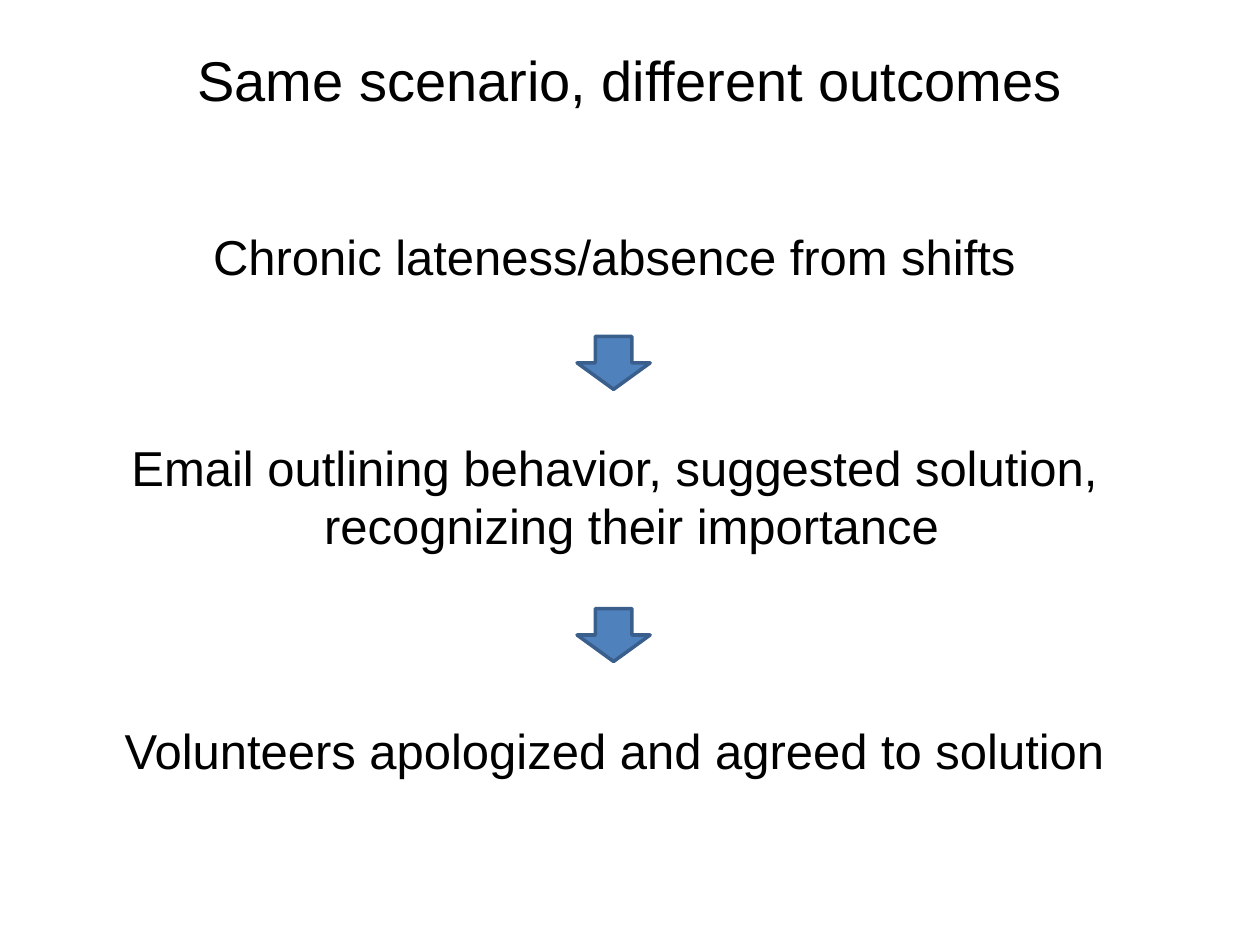
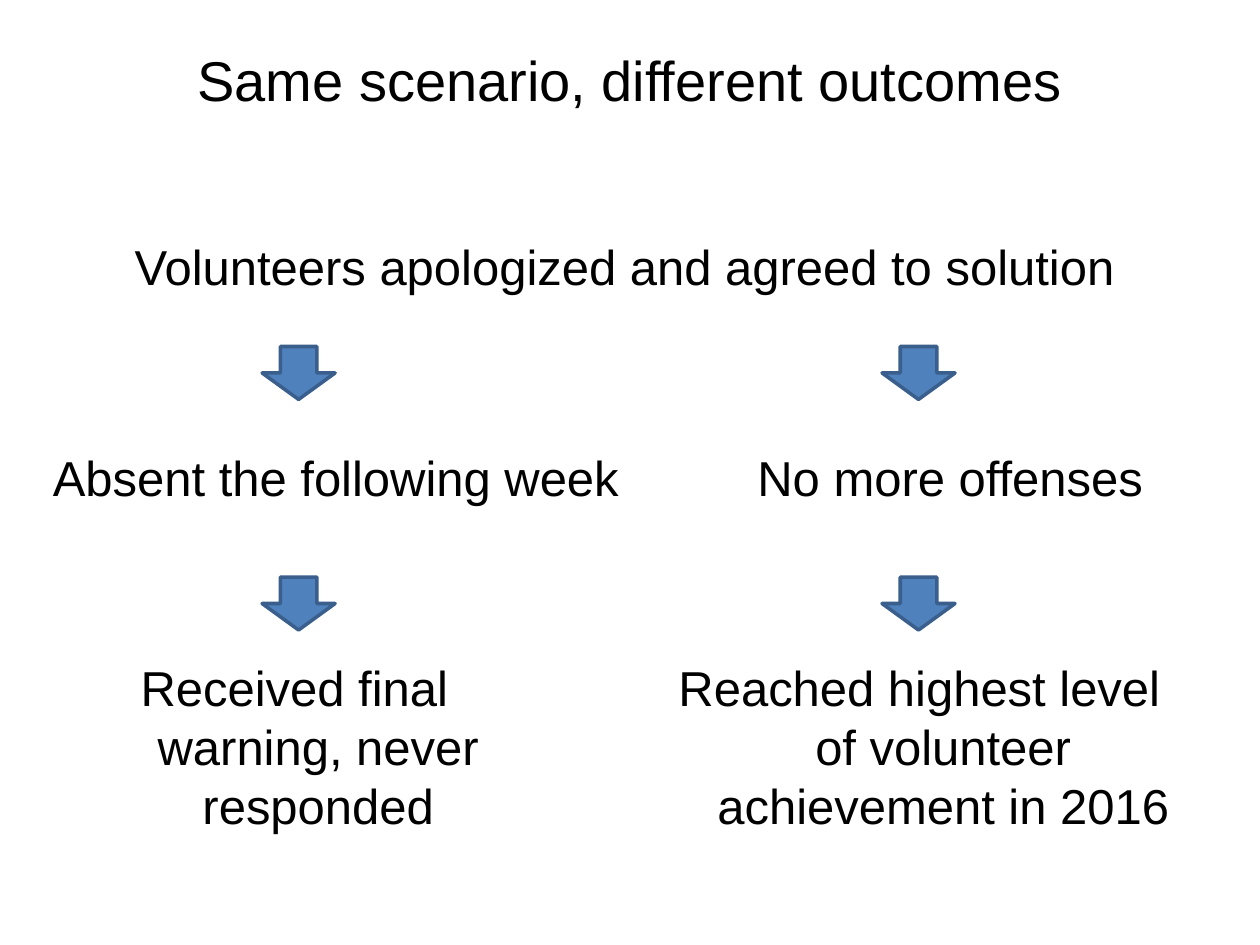
from pptx import Presentation
from pptx.dml.color import RGBColor
from pptx.enum.shapes import MSO_SHAPE
from pptx.enum.text import MSO_ANCHOR, PP_ALIGN
from pptx.oxml.ns import qn
from pptx.util import Inches, Pt
from lxml import etree

BLACK = RGBColor(0x00, 0x00, 0x00)
ARROW_FILL = RGBColor(0x4F, 0x81, 0xBD)
ARROW_EDGE = RGBColor(0x3A, 0x5F, 0x8C)
DOWN_ARROW = MSO_SHAPE.DOWN_ARROW
CENTER = PP_ALIGN.CENTER
MIDDLE, TOP = MSO_ANCHOR.MIDDLE, MSO_ANCHOR.TOP

FONT = "Arial"
TITLE = "Same scenario, different outcomes"
TITLE_BOX = (0.5, 0, 9, 1.25)
AGREEMENT = "Volunteers apologized and agreed to solution"
HANGING_INDENT = Inches(0.38)
ARROW_WIDTH, ARROW_HEIGHT = 0.58, 0.42

# Each slide: steps as (text, left, top, width, height), arrows as (left, top)
SLIDES = [
    (
        [
            ("Chronic lateness/absence from shifts", 0.5, 1.75, 8.75, 0.67),
            # The closing space takes part in centring the second line
            ("Email outlining behavior, suggested solution, "
             "recognizing their importance ", 0, 3.42, 9.75, 1.17),
            (AGREEMENT, 0.5, 5.67, 8.75, 0.67),
        ],
        [(4.58, top) for top in (2.67, 4.83)],
    ),
    (
        [
            (AGREEMENT, 0.58, 1.83, 8.75, 0.67),
            ("Absent the following week", 0.08, 3.5, 5.17, 0.67),
            ("No more offenses", 5.5, 3.5, 4.08, 0.67),
            ("Received final warning, never responded", 0.5, 5.17, 3.67, 1.92),
            ("Reached highest level of volunteer achievement in 2016",
             5.17, 5.17, 4.25, 1.75),
        ],
        [(left, top) for top in (2.75, 4.58) for left in (2.08, 7)],
    ),
]


def add_centered_text(slide, text, box, size, anchor):
    frame = slide.shapes.add_textbox(*map(Inches, box)).text_frame
    frame.word_wrap = True
    frame.vertical_anchor = anchor
    paragraph = frame.paragraphs[0]
    paragraph.text = text
    paragraph.alignment = CENTER
    font = paragraph.runs[0].font
    font.name = FONT
    font.size = Pt(size)
    font.color.rgb = BLACK
    return paragraph


def indent_step(paragraph):
    """Set the hanging indent and the 20% space before of a step."""
    properties = paragraph._p.get_or_add_pPr()
    properties.set("marL", str(HANGING_INDENT))
    properties.set("indent", str(-HANGING_INDENT))
    space_before = etree.SubElement(properties, qn("a:spcBef"))
    etree.SubElement(space_before, qn("a:spcPct")).set("val", "20000")


presentation = Presentation()
presentation.slide_width = Inches(10)
presentation.slide_height = Inches(7.5)
blank_layout = presentation.slide_layouts[6]

for steps, arrows in SLIDES:
    slide = presentation.slides.add_slide(blank_layout)
    add_centered_text(slide, TITLE, TITLE_BOX, 32, MIDDLE)

    for text, *box in steps:
        indent_step(add_centered_text(slide, text, box, 28, TOP))

    for left, top in arrows:
        arrow = slide.shapes.add_shape(
            DOWN_ARROW, Inches(left), Inches(top),
            Inches(ARROW_WIDTH), Inches(ARROW_HEIGHT))
        arrow.shadow.inherit = False
        arrow.fill.solid()
        arrow.fill.fore_color.rgb = ARROW_FILL
        arrow.line.color.rgb = ARROW_EDGE
        arrow.line.width = Pt(2)

presentation.save("out.pptx")
